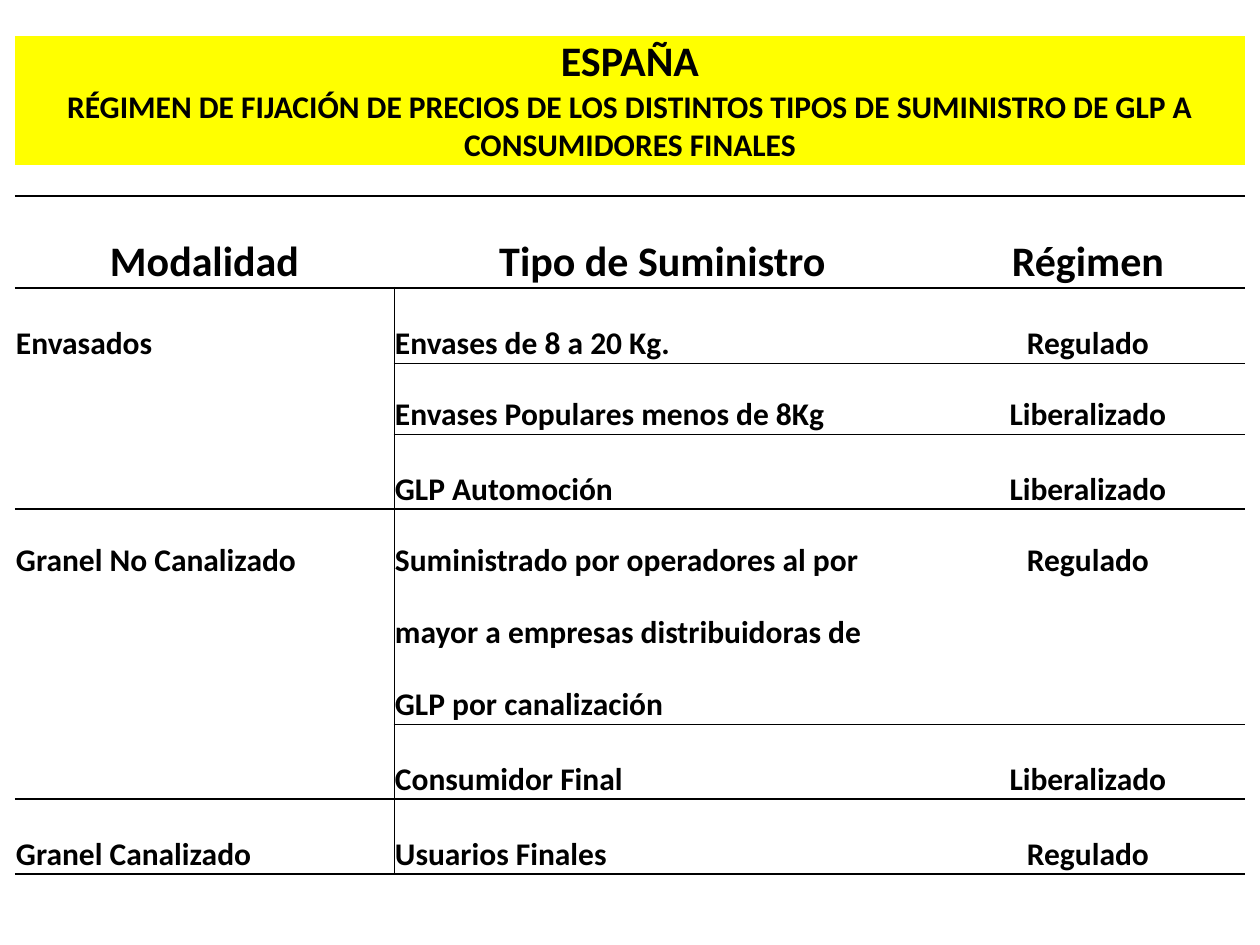
from lxml.etree import SubElement
from pptx import Presentation
from pptx.dml.color import RGBColor
from pptx.enum.text import MSO_ANCHOR as Anchor, PP_ALIGN as Align
from pptx.oxml.ns import qn
from pptx.util import Pt

PX = 9144000 // 1260  # slide is 1260 px wide
BLACK, YELLOW = "000000", "FFFF00"
COLUMNS = [379, 537, 314]
TITLE = [
    ("ESPAÑA", 24),
    ("RÉGIMEN DE FIJACIÓN DE PRECIOS DE LOS DISTINTOS TIPOS DE SUMINISTRO "
     "DE GLP A CONSUMIDORES FINALES", 18),
]
# Height, texts, font size, rule below the first column, rule below the others
ROWS = [
    (129, ["", "", ""], 18, 0, 0),
    (31, ["", "", ""], 8, 1.5, 1.5),
    (92, ["Modalidad", "Tipo de Suministro", "Régimen"], 24, 1.5, 1.5),
    (75, ["Envasados", "Envases de 8 a 20 Kg.", "Regulado"], 18, 0, 0.5),
    (71, ["", "Envases Populares menos de 8Kg", "Liberalizado"], 18, 0, 0.5),
    (75, ["", "GLP Automoción", "Liberalizado"], 18, 1, 1),
    (71, ["Granel No Canalizado", "Suministrado por operadores al por",
          "Regulado"], 18, 0, 0),
    (72, ["", "mayor a empresas distribuidoras de", ""], 18, 0, 0),
    (72, ["", "GLP por canalización", ""], 18, 0, 0.5),
    (75, ["", "Consumidor Final", "Liberalizado"], 18, 1, 1),
    (75, ["Granel Canalizado", "Usuarios Finales", "Regulado"], 18, 1, 1),
]
HEADER_ROW = 2


def px(length):
    return length * PX


def color(hex_value):
    return RGBColor.from_string(hex_value)


def style_paragraph(paragraph, text, size, align):
    paragraph.text = text
    paragraph.alignment = align
    font = paragraph.font
    font.name, font.size, font.bold = "Calibri", Pt(size), True
    font.color.rgb = color(BLACK)
    if not text:  # an empty cell takes its line height from the end mark
        paragraph._p.get_or_add_endParaRPr().set("sz", str(size * 100))


def set_borders(cell, **widths):
    """Draw the given sides (L, R, T, B) in points; a width of 0 hides one."""
    properties = cell._tc.get_or_add_tcPr()
    for side in "LRTB":
        width = widths[side]
        line = SubElement(properties, qn(f"a:ln{side}"), w=str(Pt(width)))
        if width:
            fill = SubElement(line, qn("a:solidFill"))
            SubElement(fill, qn("a:srgbClr"), val=BLACK)
        else:
            SubElement(line, qn("a:noFill"))


def format_cell(cell):
    cell.vertical_anchor = Anchor.BOTTOM
    cell.margin_left = cell.margin_right = cell.margin_top = px(1)
    cell.margin_bottom = 0
    cell.fill.background()


def add_price_table(slide):
    height = sum(row[0] for row in ROWS)
    table = slide.shapes.add_table(len(ROWS), len(COLUMNS), px(15), px(36),
                                   px(sum(COLUMNS)), px(height)).table
    table.first_row = table.horz_banding = False
    for column, width in zip(table.columns, COLUMNS):
        column.width = px(width)

    above = [0, 0, 0]
    for r, (height, texts, size, first_rule, other_rule) in enumerate(ROWS):
        table.rows[r].height = px(height)
        below = [first_rule, other_rule, other_rule]
        divider = 0.5 if r > HEADER_ROW else 0
        for c, text in enumerate(texts):
            cell = table.cell(r, c)
            centred = r <= HEADER_ROW or c == 2
            style_paragraph(cell.text_frame.paragraphs[0], text, size,
                            Align.CENTER if centred else Align.LEFT)
            set_borders(cell, L=divider if c == 1 else 0,
                        R=divider if c == 0 else 0, T=above[c], B=below[c])
            format_cell(cell)
        above = below
    return table


def add_title(table):
    cell = table.cell(0, 0)
    cell.merge(table.cell(0, len(COLUMNS) - 1))
    cell.fill.solid()
    cell.fill.fore_color.rgb = color(YELLOW)
    frame = cell.text_frame
    frame.clear()
    for i, (text, size) in enumerate(TITLE):
        paragraph = frame.add_paragraph() if i else frame.paragraphs[0]
        style_paragraph(paragraph, text, size, Align.CENTER)


def main():
    presentation = Presentation()
    presentation.slide_width, presentation.slide_height = px(1260), px(945)
    slide = presentation.slides.add_slide(presentation.slide_layouts[6])
    table = add_price_table(slide)
    add_title(table)
    presentation.save("out.pptx")


if __name__ == "__main__":
    main()
